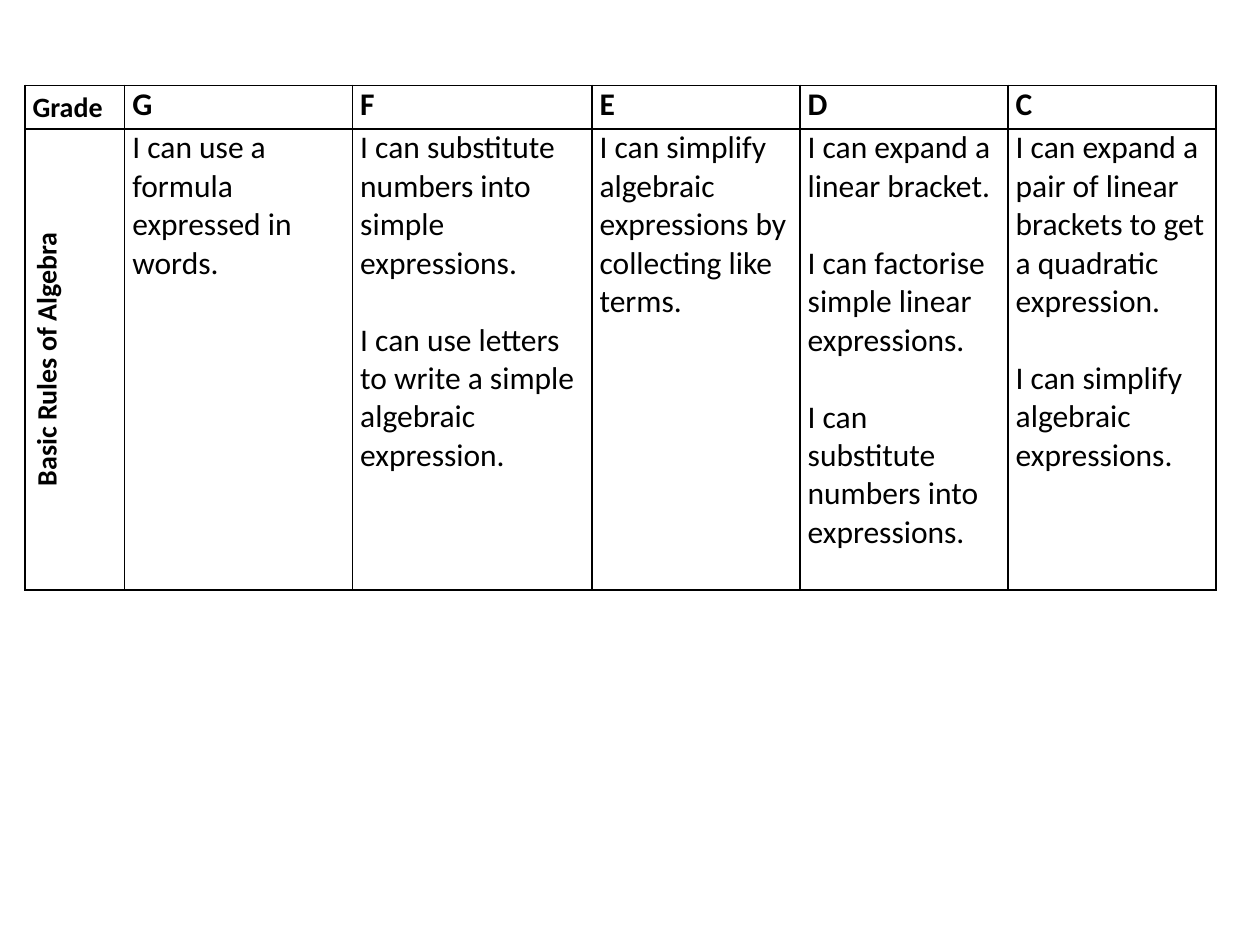
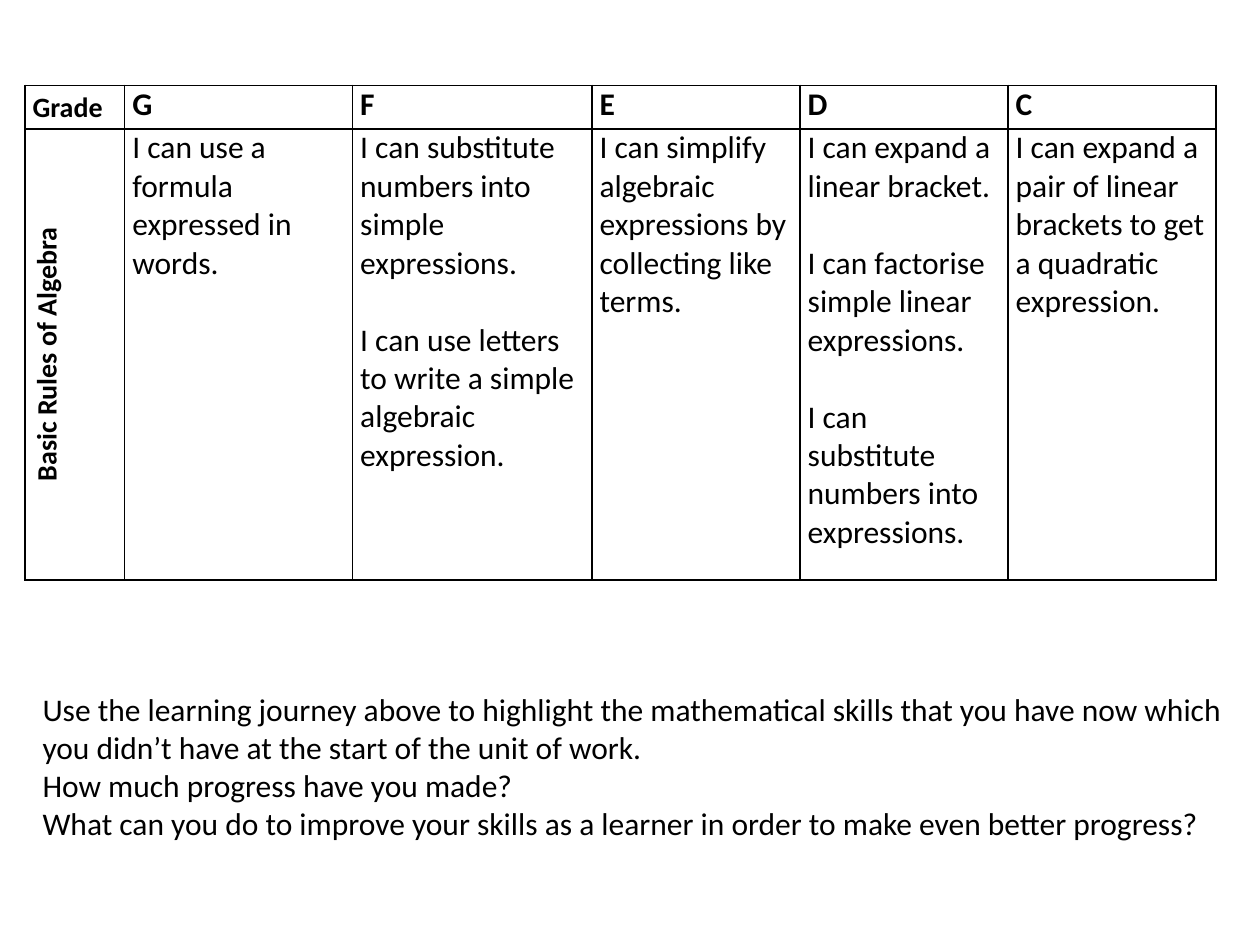
from dataclasses import dataclass

from lxml.etree import SubElement
from pptx import Presentation
from pptx.dml.color import RGBColor as RGB
from pptx.enum.text import MSO_AUTO_SIZE as FIT, MSO_ANCHOR as ANCHOR, PP_ALIGN as ALIGN
from pptx.oxml.ns import qn
from pptx.slide import Slide
from pptx.table import _Cell as Cell
from pptx.text.text import TextFrame as Frame
from pptx.util import Pt

COLORS = {"ink": "000000", "page": "FFFFFF"}
FACE = "Calibri"
LINE = 22  # height of one 18 pt line
LEFT, TOP = 14.2, 48.8
WIDTHS = [57, 130.2, 136.8] + [118.9] * 3
HEAD = 24.8
MARGINS = {"margin_left": Pt(4.5), "margin_right": Pt(4.5),
           "margin_top": 0, "margin_bottom": 0}
TOPIC = "Basic Rules of Algebra"


@dataclass(frozen=True)
class Style:
    size: float = 18
    bold: bool = False
    align: ALIGN = ALIGN.LEFT
    spacing: float = 1.0
    gap: float = 0


BODY = Style(gap=LINE)
GRADE = Style(bold=True)
LABEL = Style(size=16, bold=True, spacing=1.15)
SIDE = Style(size=16, bold=True, spacing=1.15, align=ALIGN.CENTER)
NOTE = Style()


@dataclass(frozen=True)
class Grade:
    name: str
    skills: tuple[str, ...]


EXPAND = "I can expand a pair of linear brackets to get a quadratic expression."
BASE = [
    Grade("G", ("I can use a formula expressed in words.",)),
    Grade("F", ("I can substitute numbers into simple expressions.",
                "I can use letters to write a simple algebraic expression.")),
    Grade("E", ("I can simplify algebraic expressions by collecting like terms.",)),
    Grade("D", ("I can expand a linear bracket.",
                "I can factorise simple linear expressions.",
                "I can substitute numbers into expressions.")),
]
FULL = Grade("C", (EXPAND, "I can simplify algebraic expressions."))
SHORT = Grade("C", (EXPAND,))
TASKS = (
    "Use the learning journey above to highlight the mathematical skills that "
    "you have now which you didn’t have at the start of the unit of work.",
    "How much progress have you made?",
    "What can you do to improve your skills as a learner in order to make "
    "even better progress?",
)


def write(frame: Frame, lines: tuple[str, ...], style: Style) -> None:
    for i, line in enumerate(lines):
        para = frame.paragraphs[0] if i == 0 else frame.add_paragraph()
        layout = {"alignment": style.align, "line_spacing": style.spacing,
                  "space_before": Pt(style.gap if i else 0)}
        for key, value in layout.items():
            setattr(para, key, value)
        run = para.add_run()
        run.text = line
        look = {"name": FACE, "size": Pt(style.size), "bold": style.bold}
        for key, value in look.items():
            setattr(run.font, key, value)
        run.font.color.rgb = RGB.from_string(COLORS["ink"])


def rule(cell: Cell) -> None:
    """Draw a thin line on all four sides of the cell."""
    props = cell._tc.get_or_add_tcPr()
    for side in ("a:lnL", "a:lnR", "a:lnT", "a:lnB"):
        edge = SubElement(props, qn(side), w=str(Pt(1)))
        fill = SubElement(edge, qn("a:solidFill"))
        SubElement(fill, qn("a:srgbClr"), val=COLORS["ink"])


def fill(cell: Cell, lines: tuple[str, ...], style: Style) -> None:
    rule(cell)
    cell.fill.background()
    cell.vertical_anchor = ANCHOR.TOP
    for key, value in MARGINS.items():
        setattr(cell, key, value)
    write(cell.text_frame, lines, style)


def journey(slide: Slide, grades: list[Grade], depth: float) -> None:
    """Add the table of skills by grade; depth is the height of its skills row."""
    table = slide.shapes.add_table(2, len(WIDTHS), Pt(LEFT), Pt(TOP),
                                   Pt(sum(WIDTHS)), Pt(HEAD + depth)).table
    table.first_row = table.horz_banding = False
    for col, width in zip(table.columns, WIDTHS):
        col.width = Pt(width)
    for row, height in zip(table.rows, (HEAD, depth)):
        row.height = Pt(height)
    fill(table.cell(0, 0), ("Grade",), LABEL)
    side = table.cell(1, 0)
    fill(side, (TOPIC,), SIDE)
    side._tc.tcPr.set("vert", "vert270")
    for i, grade in enumerate(grades, start=1):
        fill(table.cell(0, i), (grade.name,), GRADE)
        fill(table.cell(1, i), grade.skills, BODY)


def review(slide: Slide) -> None:
    frame = slide.shapes.add_textbox(Pt(17.2), Pt(391), Pt(702.8), Pt(94.5)).text_frame
    frame.word_wrap = True
    frame.auto_size = FIT.SHAPE_TO_FIT_TEXT
    write(frame, TASKS, NOTE)


def main() -> None:
    deck = Presentation()
    deck.slide_width, deck.slide_height = Pt(720), Pt(540)
    for last, depth in ((FULL, 263.6), (SHORT, 257.8)):
        slide = deck.slides.add_slide(deck.slide_layouts[6])
        paint = slide.background.fill
        paint.solid()
        paint.fore_color.rgb = RGB.from_string(COLORS["page"])
        journey(slide, BASE + [last], depth)
    review(slide)
    deck.save("out.pptx")


if __name__ == "__main__":
    main()
